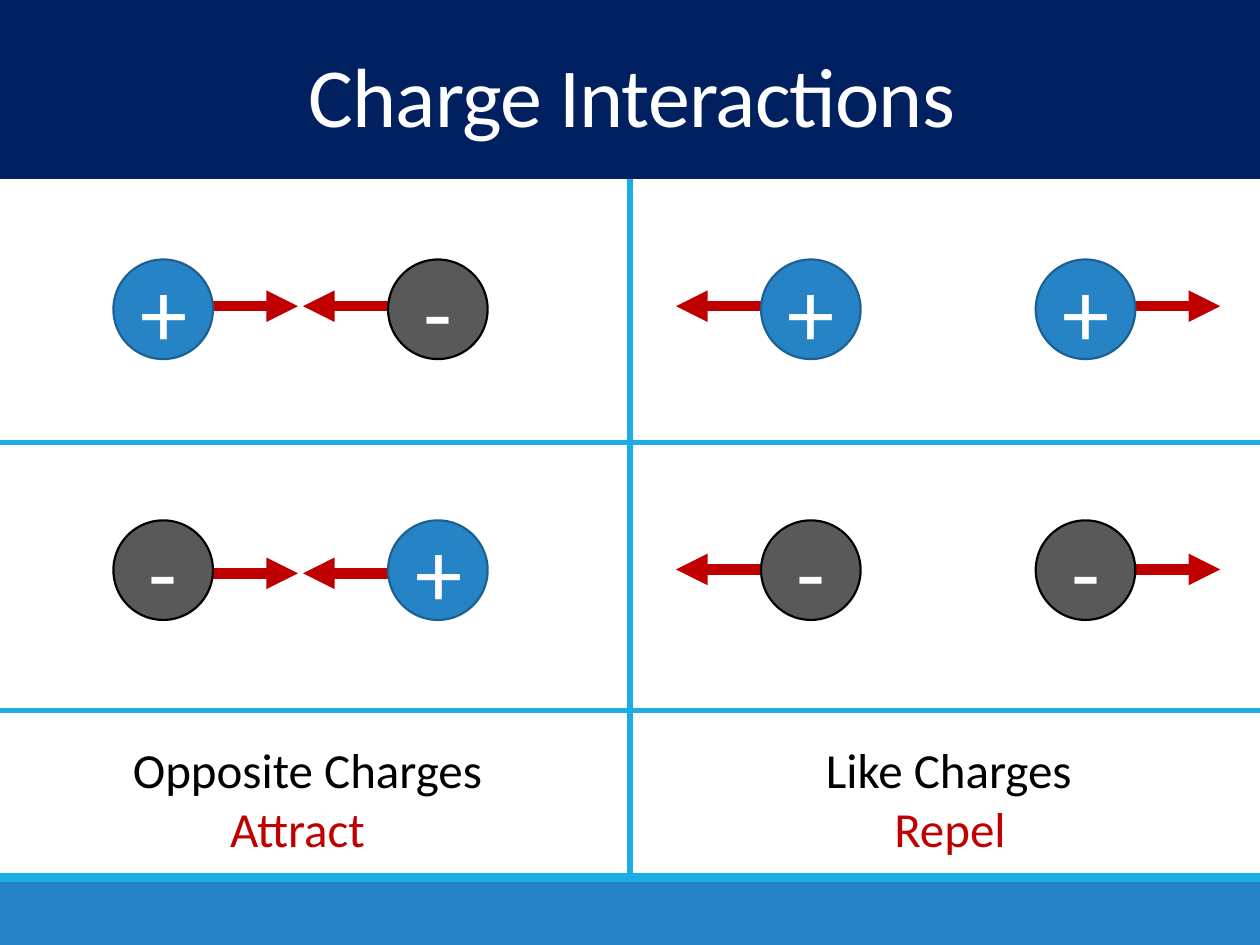
from lxml import etree
from pptx import Presentation
from pptx.dml.color import RGBColor
from pptx.enum.shapes import MSO_CONNECTOR as CONN, MSO_SHAPE as SHAPE
from pptx.enum.text import MSO_ANCHOR as ANCHOR, MSO_AUTO_SIZE as FIT, PP_ALIGN as ALIGN
from pptx.oxml.ns import qn
from pptx.util import Inches, Pt

WHITE = RGBColor(0xFF, 0xFF, 0xFF)
BLACK = RGBColor(0, 0, 0)
NAVY = RGBColor(0x00, 0x20, 0x60)
BLUE = RGBColor(0x26, 0x83, 0xC6)
DARK_BLUE = RGBColor(0x1C, 0x61, 0x92)
CYAN = RGBColor(0x1C, 0xAD, 0xE4)
GRAY = RGBColor(0x59, 0x59, 0x59)
RED = RGBColor(0xC0, 0, 0)

prs = Presentation()
prs.slide_width, prs.slide_height = Inches(10), Inches(7.5)
COL = prs.slide_width / 100
ROW = prs.slide_height / 75
slide = prs.slides.add_slide(prs.slide_layouts[5])
shapes = slide.shapes


def grid(x, y, w, h):
    return [round(v) for v in (x * COL, y * ROW, w * COL, h * ROW)]


def write(sp, text, size=28, color=BLACK, wrap=True, anchor=ANCHOR.TOP, spacing=None, fit=FIT.NONE):
    tf = sp.text_frame
    tf.word_wrap = wrap
    tf.auto_size = fit
    tf.vertical_anchor = anchor
    p = tf.paragraphs[0]
    p.alignment = ALIGN.CENTER
    p.line_spacing = spacing
    r = p.add_run()
    r.text = text
    r.font.name = "Calibri"
    r.font.size = Pt(size)
    r.font.color.rgb = color
    return r


bands = [(0, 14.2, NAVY), (70, 5, BLUE), (69.3, 0.7, CYAN)]
for top, height, color in bands:
    sp = shapes.add_shape(SHAPE.RECTANGLE, *grid(0, top, 100, height))
    sp.shadow.inherit = False
    sp.fill.solid()
    sp.fill.fore_color.rgb = color
    sp.line.fill.background()

title = shapes.title
title.left, title.top, title.width, title.height = grid(0.3, 4.2, 99.7, 8.4)
r = write(title, "Charge Interactions", size=48, color=WHITE, spacing=0.85)
r._r.get_or_add_rPr().set("spc", "-50")
shapes._spTree.append(title._element)

dividers = [(0, 35.1, 100, 35.1), (50, 14.2, 50, 69.6), (0, 56.4, 100, 56.4)]
lines = [(ends, CYAN, 3, False) for ends in dividers]

DIAMETER, ARROW = 7.9, 6.75
charges = []
pairs = [(9, 20.6, "+-", 24.3, True), (60.4, 20.6, "++", 24.3, False),
         (9, 41.3, "-+", 45.5, True), (60.4, 41.3, "--", 45.2, False)]
for left, top, signs, y, attract in pairs:
    right = left + 21.8
    if attract:
        starts = [(left + DIAMETER, ARROW), (right, -ARROW)]
    else:
        starts = [(left, -ARROW), (right + DIAMETER, ARROW)]
    lines += [((x, y, x + dx, y), RED, 6, True) for x, dx in starts]
    charges += [(left, top, signs[0]), (right, top, signs[1])]

for ends, color, width, arrow in lines:
    line = shapes.add_connector(CONN.STRAIGHT, *grid(*ends))
    line.line.color.rgb = color
    line.line.width = Pt(width)
    if arrow:
        etree.SubElement(line.line._get_or_add_ln(), qn("a:tailEnd"), type="triangle")
    etree.SubElement(line._element.spPr, qn("a:effectLst"))

STYLES = {"+": (BLUE, DARK_BLUE), "-": (GRAY, BLACK)}
for left, top, sign in charges:
    fill, outline = STYLES[sign]
    sp = shapes.add_shape(SHAPE.OVAL, *grid(left, top, DIAMETER, DIAMETER))
    sp.shadow.inherit = False
    sp.fill.solid()
    sp.fill.fore_color.rgb = fill
    sp.line.color.rgb = outline
    sp.line.width = Pt(1.25)
    write(sp, sign, size=54, color=WHITE, anchor=ANCHOR.MIDDLE)

labels = [("Opposite Charges", 9.1, 58.2, 30.6, BLACK), ("Attract", 17.2, 62.9, 12.8, RED),
          ("Like Charges", 64.1, 58.2, 22.4, BLACK), ("Repel", 69.6, 62.9, 11.6, RED)]
for text, left, top, width, color in labels:
    sp = shapes.add_textbox(*grid(left, top, width, 5.7))
    write(sp, text, color=color, wrap=False, fit=FIT.SHAPE_TO_FIT_TEXT)

prs.save("out.pptx")
